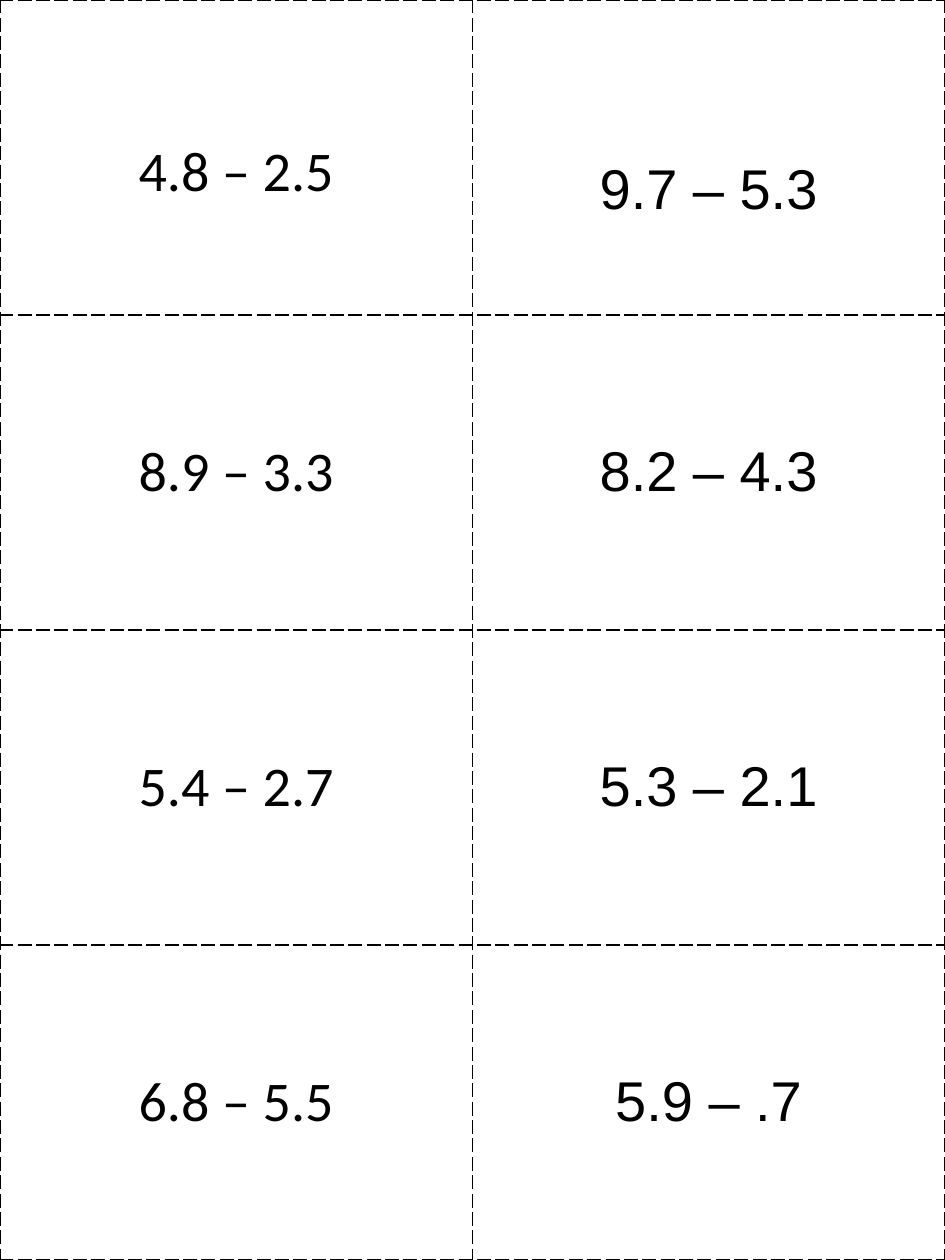
from lxml import etree
from pptx import Presentation
from pptx.dml.color import RGBColor
from pptx.enum.text import MSO_ANCHOR, PP_ALIGN
from pptx.oxml.ns import qn
from pptx.util import Inches, Pt

MID = MSO_ANCHOR.MIDDLE
CENTER = PP_ALIGN.CENTER

CARDS = [
    ("4.8 – 2.5", "9.7 – 5.3"),
    ("8.9 – 3.3", "8.2 – 4.3"),
    ("5.4 – 2.7", "5.3 – 2.1"),
    ("6.8 – 5.5", "5.9 – .7"),
]
FONTS = ("Calibri", "Arial")
DROPS = {(0, 0): 0.23, (0, 1): 0.51}  # extra top margin, in inches

THEME = {"ink": "000000", "paper": "FFFFFF", "size": 32, "rule": 1, "dash": "lgDash"}
WIDE, HIGH = 7.5, 10
PAD = 0.05


def put_text(cell, text, *, font, size, color, drop=0):
    cell.vertical_anchor = MID
    cell.margin_top = Inches(PAD + drop)
    par = cell.text_frame.paragraphs[0]
    par.alignment = CENTER
    run = par.add_run()
    run.text = text
    run.font.name = font
    run.font.size = Pt(size)
    run.font.color.rgb = RGBColor.from_string(color)


def add_rules(cell, *, color, width, dash):
    """Draw a dashed border on all four sides of a cell."""
    props = cell._tc.get_or_add_tcPr()
    for side in "LRTB":
        line = etree.SubElement(props, qn("a:ln" + side), w=str(Pt(width)))
        fill = etree.SubElement(line, qn("a:solidFill"))
        etree.SubElement(fill, qn("a:srgbClr"), val=color)
        etree.SubElement(line, qn("a:prstDash"), val=dash)


def main():
    deck = Presentation()
    deck.slide_width, deck.slide_height = Inches(WIDE), Inches(HIGH)
    slide = deck.slides.add_slide(deck.slide_layouts[6])

    rows, cols = len(CARDS), len(FONTS)
    table = slide.shapes.add_table(
        rows, cols, 0, 0, Inches(WIDE), Inches(HIGH)
    ).table
    table.first_row = table.horz_banding = False

    for r, row in enumerate(CARDS):
        for c, text in enumerate(row):
            cell = table.cell(r, c)
            add_rules(cell, color=THEME["ink"], width=THEME["rule"],
                      dash=THEME["dash"])
            cell.fill.solid()
            cell.fill.fore_color.rgb = RGBColor.from_string(THEME["paper"])
            put_text(cell, text, font=FONTS[c], size=THEME["size"],
                     color=THEME["ink"], drop=DROPS.get((r, c), 0))

    deck.save("out.pptx")


if __name__ == "__main__":
    main()
